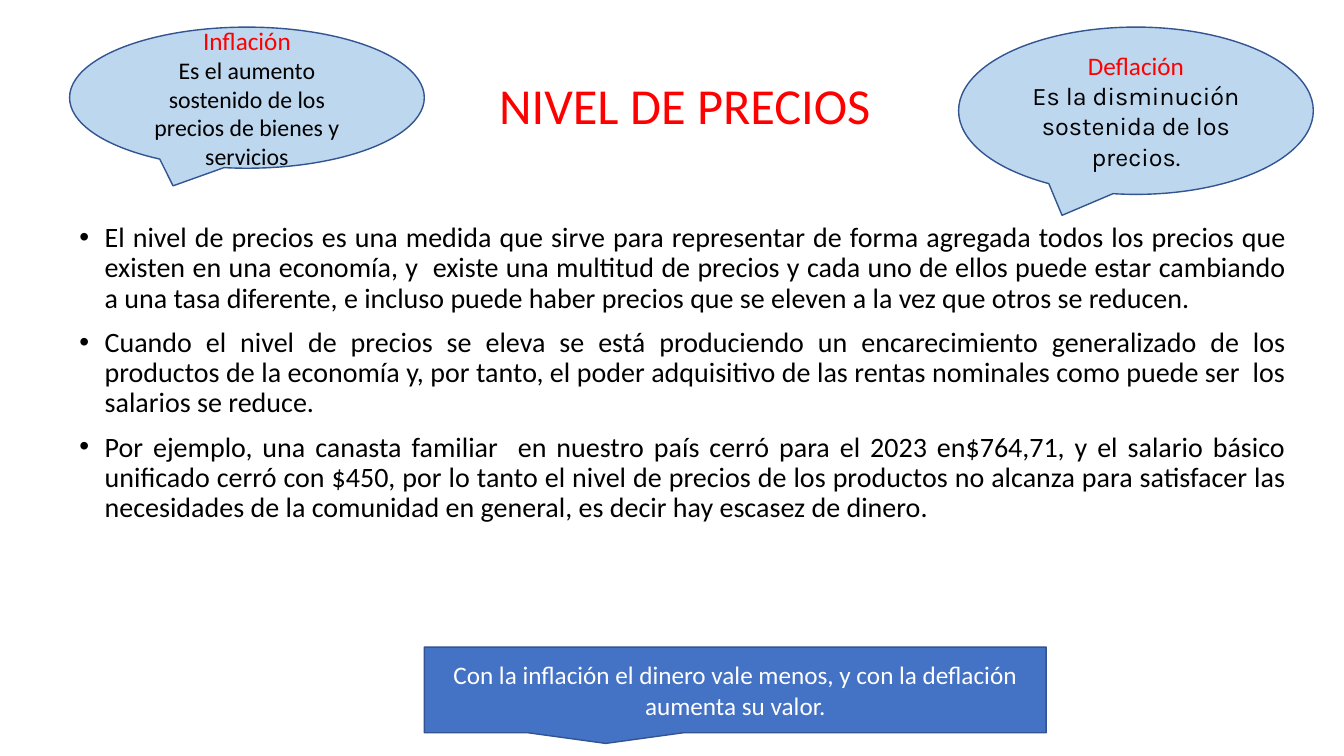
from dataclasses import dataclass

from lxml.etree import SubElement
from pptx import Presentation
from pptx.dml.color import RGBColor
from pptx.enum.shapes import MSO_SHAPE
from pptx.enum.text import MSO_ANCHOR, PP_ALIGN
from pptx.oxml.ns import qn
from pptx.util import Pt


@dataclass(frozen=True)
class Theme:
    font: str = "Calibri"
    alt_font: str = "Karla"
    accent: str = "FF0000"
    text: str = "000000"
    light: str = "FFFFFF"
    bubble: str = "BDD7EE"
    banner: str = "4472C4"
    outline: str = "325491"
    title_size: int = 36
    body_size: int = 20
    note_size: int = 18
    small_size: int = 17


class SlideBuilder:
    def __init__(self, slide, theme):
        self.slide = slide
        self.theme = theme

    def add_text(self, p, text, size, color, font=None, **formats):
        for name, value in formats.items():
            setattr(p, name, value)
        r = p.add_run()
        r.text = text
        r.font.color.rgb = RGBColor.from_string(color)
        for name, value in {"name": font or self.theme.font, "size": Pt(size)}.items():
            setattr(r.font, name, value)

    def text_frame(self, box, **formats):
        tf = self.slide.shapes.add_textbox(*map(Pt, box)).text_frame
        for name, value in {"word_wrap": True, **formats}.items():
            setattr(tf, name, value)
        return tf

    def title(self, box, text):
        tf = self.text_frame(box, vertical_anchor=MSO_ANCHOR.MIDDLE, margin_bottom=Pt(43))
        self.add_text(tf.paragraphs[0], text, self.theme.title_size, self.theme.accent,
                      alignment=PP_ALIGN.CENTER, line_spacing=0.9)

    def bullets(self, box, items):
        tf = self.text_frame(box, margin_top=Pt(44.4))
        for i, item in enumerate(items):
            p = tf.add_paragraph() if i else tf.paragraphs[0]
            pPr = p._p.get_or_add_pPr()
            pPr.set("marL", str(Pt(18)))
            pPr.set("indent", str(Pt(-18)))
            SubElement(pPr, qn("a:buFont")).set("typeface", "Arial")
            SubElement(pPr, qn("a:buChar")).set("char", "•")
            self.add_text(p, item, self.theme.body_size, self.theme.text,
                          alignment=PP_ALIGN.JUSTIFY, line_spacing=0.9,
                          space_before=Pt(10 if i else 0))

    def callout(self, kind, box, fill, lines):
        """Draw a callout; each line is (text, size, color) or (text, size, color, font)."""
        sp = self.slide.shapes.add_shape(kind, *map(Pt, box))
        sp.shadow.inherit = False
        sp.fill.solid()
        sp.fill.fore_color.rgb = RGBColor.from_string(fill)
        sp.line.color.rgb = RGBColor.from_string(self.theme.outline)
        sp.line.width = Pt(1)
        tf = sp.text_frame
        tf.word_wrap = True
        tf.vertical_anchor = MSO_ANCHOR.MIDDLE
        for i, line in enumerate(lines):
            p = tf.add_paragraph() if i else tf.paragraphs[0]
            self.add_text(p, *line, alignment=PP_ALIGN.CENTER)


BODY = [
    "El nivel de precios es una medida que sirve para representar de forma agregada "
    "todos los precios que existen en una economía, y  existe una multitud de precios "
    "y cada uno de ellos puede estar cambiando a una tasa diferente, e incluso puede "
    "haber precios que se eleven a la vez que otros se reducen.",
    "Cuando el nivel de precios se eleva se está produciendo un encarecimiento "
    "generalizado de los productos de la economía y, por tanto, el poder adquisitivo "
    "de las rentas nominales como puede ser  los salarios se reduce.",
    "Por ejemplo, una canasta familiar  en nuestro país cerró para el 2023 en$764,71, "
    "y el salario básico unificado cerró con $450, por lo tanto el nivel de precios de "
    "los productos no alcanza para satisfacer las necesidades de la comunidad en "
    "general, es decir hay escasez de dinero.",
]


def main():
    prs = Presentation()
    prs.slide_width, prs.slide_height = Pt(960), Pt(540)
    t = Theme()
    s = SlideBuilder(prs.slides.add_slide(prs.slide_layouts[6]), t)

    s.title((305.3, 46.8, 367.9, 100.8), "NIVEL DE PRECIOS")
    s.bullets((49.7, 115.2, 876.2, 405.4), BODY)

    bubbles = [
        (49.7, 100.8, "Inflación",
         ("Es el aumento sostenido de los precios de bienes y servicios",
          t.small_size, t.text)),
        (684.7, 119.5, "Deflación",
         ("Es la disminución sostenida de los precios.",
          t.note_size, t.text, t.alt_font)),
    ]
    for left, height, term, meaning in bubbles:
        s.callout(MSO_SHAPE.OVAL_CALLOUT, (left, 19.4, 253.4, height), t.bubble,
                  [(term, t.note_size, t.accent), meaning])

    s.callout(MSO_SHAPE.RECTANGULAR_CALLOUT, (303.1, 462.2, 444.2, 61.2), t.banner,
              [("Con la inflación el dinero vale menos, y con la deflación aumenta su valor.",
                t.note_size, t.light)])
    prs.save("out.pptx")


if __name__ == "__main__":
    main()
